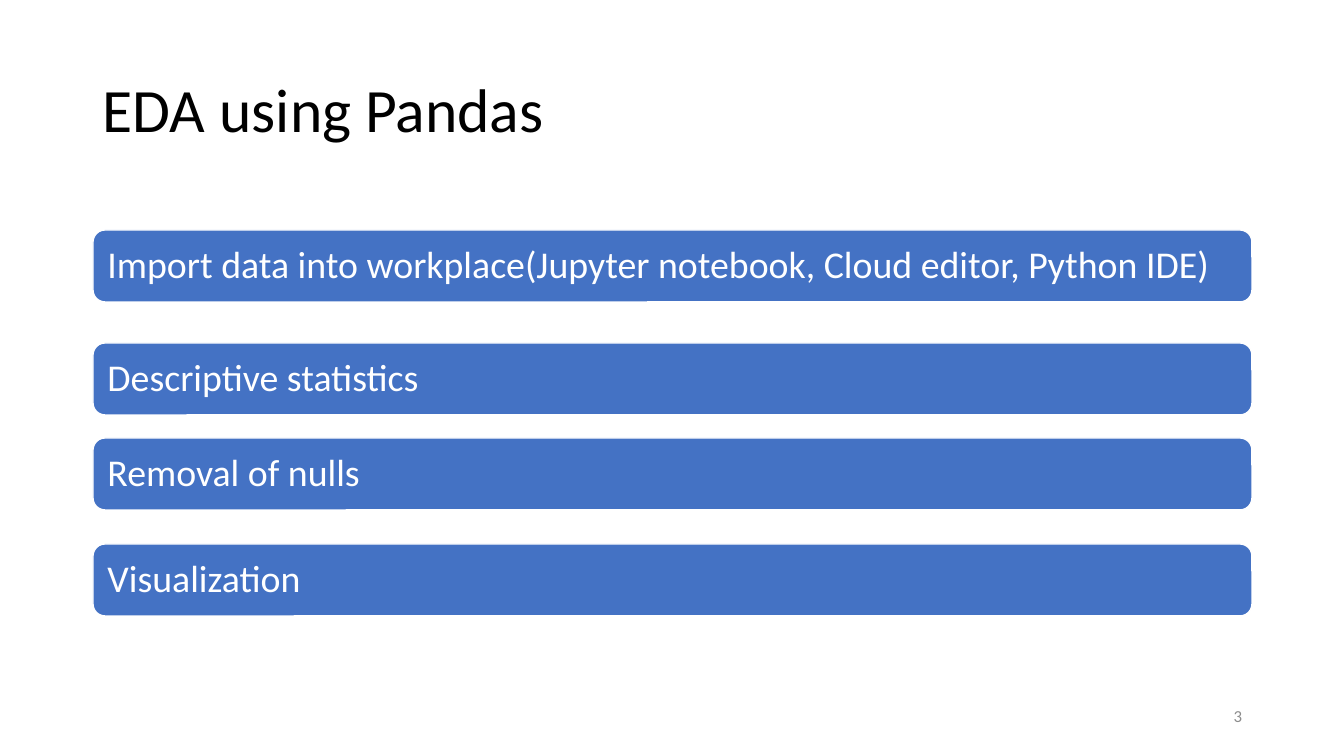
from pptx import Presentation
from pptx.dml.color import RGBColor
from pptx.enum.shapes import MSO_SHAPE
from pptx.enum.text import MSO_ANCHOR, PP_ALIGN
from pptx.util import Pt

ROUNDED = MSO_SHAPE.ROUNDED_RECTANGLE
MIDDLE = MSO_ANCHOR.MIDDLE
LEFT, RIGHT = PP_ALIGN.LEFT, PP_ALIGN.RIGHT

THEME = {
    "font": "Calibri",
    "title": (44, RGBColor(0x00, 0x00, 0x00)),
    "step": (27, RGBColor(0xFF, 0xFF, 0xFF)),
    "number": (12, RGBColor(0x8C, 0x8C, 0x8C)),
    "bar": RGBColor(0x44, 0x72, 0xC4),
    "outline": RGBColor(0xFF, 0xFF, 0xFF),
}
PX_PER_INCH = 100.8
MARGIN, CONTENT_WIDTH = 93, 1159
BAR_HEIGHT, BAR_INSET = 72, 11


def px(length):
    return round(length * 914400 / PX_PER_INCH)


def write(frame, text, style, align=LEFT, spacing=1.0):
    frame.word_wrap = True
    frame.vertical_anchor = MIDDLE
    paragraph = frame.paragraphs[0]
    paragraph.text = text
    paragraph.alignment = align
    paragraph.line_spacing = spacing
    size, color = THEME[style]
    paragraph.font.name = THEME["font"]
    paragraph.font.size = Pt(size)
    paragraph.font.color.rgb = color


deck = Presentation()
deck.slide_width, deck.slide_height = px(1344), px(756)
slide = deck.slides.add_slide(deck.slide_layouts[6])

# Title
title = slide.shapes.add_textbox(px(MARGIN), px(40), px(CONTENT_WIDTH), px(146))
write(title.text_frame, "EDA using Pandas", "title", spacing=0.9)

# Analysis steps, each with its own top edge
steps = [
    (230, "Import data into workplace(Jupyter notebook, Cloud editor, Python IDE)"),
    (343, "Descriptive statistics"),
    (438, "Removal of nulls"),
    (544, "Visualization"),
]
for top, step in steps:
    bar = slide.shapes.add_shape(
        ROUNDED, px(MARGIN), px(top), px(CONTENT_WIDTH), px(BAR_HEIGHT))
    bar.shadow.inherit = False
    bar.fill.solid()
    bar.fill.fore_color.rgb = THEME["bar"]
    bar.line.color.rgb = THEME["outline"]
    bar.line.width = Pt(1)
    frame = bar.text_frame
    frame.margin_left = frame.margin_right = px(BAR_INSET)
    frame.margin_top = frame.margin_bottom = px(BAR_INSET)
    write(frame, step, "step", spacing=0.9)

# Slide number
number = slide.shapes.add_textbox(px(950), px(696), px(302), px(40))
write(number.text_frame, "3", "number", align=RIGHT)

deck.save("out.pptx")
